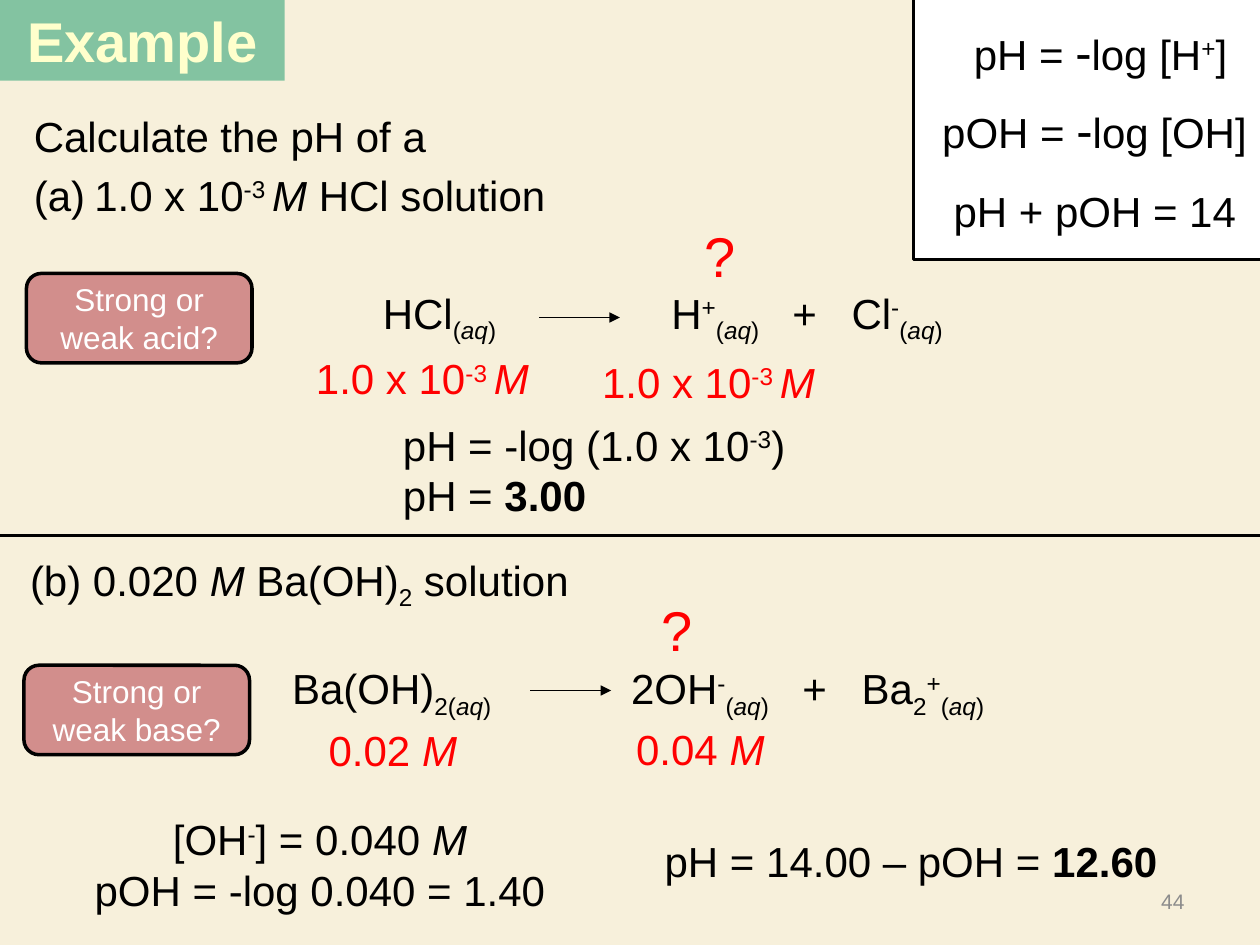
from lxml.etree import SubElement
from pptx import Presentation
from pptx.dml.color import RGBColor
from pptx.enum.shapes import MSO_CONNECTOR, MSO_SHAPE
from pptx.enum.text import MSO_ANCHOR, MSO_AUTO_SIZE, PP_ALIGN
from pptx.oxml.ns import qn
from pptx.util import Pt

EMU_PER_PX = 9144  # 100 px to the inch
BLACK, WHITE, RED = "000000", "FFFFFF", "FF0000"
BASELINES = {"^": "30000", "_": "-25000"}
AQ = [("(", "_"), ("aq", "_i"), (")", "_")]
MOLAR = ("M", "i")


def px(length):
    return length * EMU_PER_PX


def color(hex_code):
    return RGBColor.from_string(hex_code)


def fill_runs(paragraph, runs, size, hex_code):
    """Add (text, style[, size]) runs; style letters: b bold, i italic, ^ super, _ sub."""
    for text, style, *own_size in runs:
        run = paragraph.add_run()
        run.text = text
        font = run.font
        font.name = "Arial"
        font.size = Pt(own_size[0] if own_size else size)
        font.color.rgb = color(hex_code)
        font.bold = "b" in style
        font.italic = "i" in style
        for mark, offset in BASELINES.items():
            if mark in style:
                run._r.get_or_add_rPr().set("baseline", offset)


def add_text(slide, box, paragraphs, size=24, hex_code=BLACK,
             align=PP_ALIGN.LEFT, wrap=True):
    frame = slide.shapes.add_textbox(*map(px, box)).text_frame
    frame.word_wrap = wrap
    for index, runs in enumerate(paragraphs):
        paragraph = frame.add_paragraph() if index else frame.paragraphs[0]
        paragraph.alignment = align
        fill_runs(paragraph, runs, size, hex_code)
    return frame


def add_panel(slide, preset, box, fill):
    panel = slide.shapes.add_shape(preset, *map(px, box))
    panel.shadow.inherit = False
    panel.fill.solid()
    panel.fill.fore_color.rgb = color(fill)
    panel.line.color.rgb = color(BLACK)
    panel.line.width = Pt(2)
    return panel


def add_rule(slide, left, top, width, weight, arrow=False):
    rule = slide.shapes.add_connector(
        MSO_CONNECTOR.STRAIGHT, px(left), px(top), px(left + width), px(top))
    rule.line.color.rgb = color(BLACK)
    rule.line.width = Pt(weight)
    if arrow:
        SubElement(rule.line._get_or_add_ln(), qn("a:tailEnd"), type="triangle")
    SubElement(rule._element.spPr, qn("a:effectLst"))


def add_title(slide, box):
    title = slide.shapes.title
    title.left, title.top, title.width, title.height = map(px, box)
    title.fill.solid()
    title.fill.fore_color.rgb = color("109769")
    fill_color = title._element.spPr.find(qn("a:solidFill"))[0]
    SubElement(fill_color, qn("a:alpha"), val="50000")
    frame = title.text_frame
    frame.auto_size = MSO_AUTO_SIZE.NONE
    frame.vertical_anchor = MSO_ANCHOR.MIDDLE
    frame.paragraphs[0].alignment = PP_ALIGN.CENTER
    fill_runs(frame.paragraphs[0], [("Example", "b")], 32, "FFFFCC")


def add_formulas(slide, box):
    left, top, _, _ = box
    add_panel(slide, MSO_SHAPE.RECTANGLE, box, WHITE)
    minus = ("-", "", 28)
    formulas = [
        (38, 33, 225, [("pH = ", ""), minus, ("log [H", ""), ("+", "^"), ("]", "")]),
        (13, 95, 264, [("pOH = ", ""), minus, ("log [OH]", "")]),
        (22, 163, 247, [("pH + pOH = 14", "")]),
    ]
    for dx, dy, width, runs in formulas:
        add_text(slide, (left + dx, top + dy, width, 50), [runs], wrap=False)


def add_hint(slide, left, top, question):
    hint = add_panel(slide, MSO_SHAPE.ROUNDED_RECTANGLE, (left, top, 179, 71), "D28E8C")
    frame = hint.text_frame
    frame.word_wrap = True
    frame.vertical_anchor = MSO_ANCHOR.MIDDLE
    frame.paragraphs[0].alignment = PP_ALIGN.CENTER
    fill_runs(frame.paragraphs[0], [(question, "")], 18, WHITE)


def add_equation(slide, box, runs, tab_stops, arrow_left, arrow_drop):
    """Reaction line whose products sit on tab stops, with the arrow in the gap."""
    left, top, _, _ = box
    frame = add_text(slide, box, [runs])
    tab_list = SubElement(frame.paragraphs[0]._p.get_or_add_pPr(), qn("a:tabLst"))
    for stop in tab_stops:
        SubElement(tab_list, qn("a:tab"), pos=str(px(stop)), algn="l")
    add_rule(slide, left + arrow_left, top + arrow_drop, 64, 0.75, arrow=True)


def add_red_notes(slide, left, top, question_at, concentrations):
    """Question mark over the unknown ion and the concentrations below."""
    dx, dy = question_at
    add_text(slide, (left + dx, top + dy, 49, 64), [[("?", "")]], 32, RED)
    for dx, dy, width, runs in concentrations:
        add_text(slide, (left + dx, top + dy, width, 50), [runs],
                 hex_code=RED, wrap=False)


def add_acid_part(slide, left, top):
    task = add_text(slide, (left + 17, top, 963, 118), [
        [("Calculate the pH of a", "")],
        [("1.0 x 10", ""), ("-3 ", "^"), ("M ", "i"), ("HCl solution", "")],
    ])
    item = task.paragraphs[1]
    item.space_before = Pt(4.8)
    properties = item._p.get_or_add_pPr()
    properties.set("marL", str(px(48)))
    properties.set("indent", str(px(-48)))
    SubElement(properties, qn("a:buAutoNum"), type="alphaLcParenBoth")

    add_hint(slide, left + 21, top + 134, "Strong or weak acid?")
    add_equation(
        slide, (left + 294, top + 140, 503, 50),
        [("HCl", ""), *AQ, ("\tH", ""), ("+", "^"), *AQ,
         ("\t+\tCl", ""), ("-", "^"), *AQ],
        (229, 325, 372), 134, 29)
    molarity = [("1.0 x 10", ""), ("-3 ", "^"), MOLAR]
    add_red_notes(slide, left, top, (549, 88),
                  [(241, 192, 207, molarity), (468, 195, 207, molarity)])
    add_text(slide, (left + 310, top + 245, 353, 91), [
        [("pH = -log (1.0 x 10", ""), ("-3", "^"), (")", "")],
        [("pH = ", ""), ("3.00", "b")],
    ])


def add_base_part(slide, left, top):
    add_text(slide, (left + 14, top, 963, 60), [
        [("(b) 0.020 ", ""), ("M ", "i"), ("Ba(OH)", ""), ("2", "_"), (" solution", "")],
    ])
    add_hint(slide, left + 19, top + 93, "Strong or weak base?")
    add_equation(
        slide, (left + 222, top + 86, 660, 50),
        [("Ba(OH)", ""), ("2", "_"), *AQ, ("\t2OH", ""), ("-", "^"), *AQ,
         ("\t+\tBa", ""), ("2", "_"), ("+", "^"), *AQ],
        (269, 405, 452), 199, 27)
    add_red_notes(slide, left, top, (515, 33),
                  [(251, 135, 132, [("0.02 ", ""), MOLAR]),
                   (495, 134, 132, [("0.04 ", ""), MOLAR])])
    add_text(slide, (left + 26, top + 206, 456, 91), [
        [("[OH", ""), ("-", "^"), ("] = 0.040 ", ""), MOLAR],
        [("pOH = -log 0.040 = 1.40", "")],
    ], align=PP_ALIGN.CENTER)
    add_text(slide, (left + 509, top + 223, 428, 50),
             [[("pH = 14.00 – pOH = ", ""), ("12.60", "b")]], align=PP_ALIGN.CENTER)


def main():
    presentation = Presentation()
    presentation.slide_width, presentation.slide_height = px(1000), px(750)
    slide = presentation.slides.add_slide(presentation.slide_layouts[5])
    slide.background.fill.solid()
    slide.background.fill.fore_color.rgb = color("F7F0DB")

    add_title(slide, (0, 0, 226, 64))
    add_formulas(slide, (725, -21, 300, 227))
    add_acid_part(slide, 0, 83)
    add_rule(slide, 0, 425, 1000, 2.25)
    add_base_part(slide, 0, 435)
    page_number = add_text(slide, (717, 695, 233, 40), [[("44", "")]], 12, "8C8C8C",
                           PP_ALIGN.RIGHT)
    page_number.vertical_anchor = MSO_ANCHOR.MIDDLE
    presentation.save("out.pptx")


if __name__ == "__main__":
    main()
